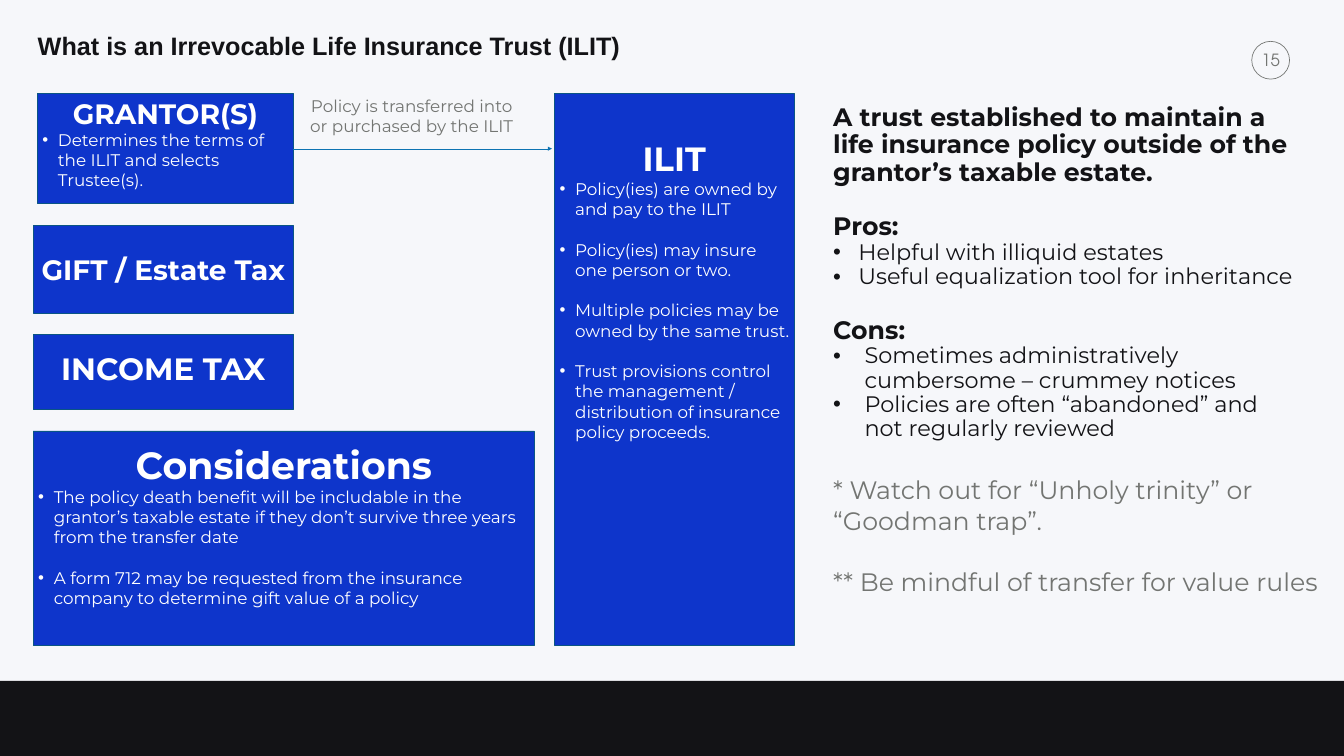
from dataclasses import dataclass

from lxml.etree import SubElement
from pptx import Presentation
from pptx.dml.color import RGBColor
from pptx.enum.shapes import MSO_CONNECTOR, MSO_SHAPE
from pptx.enum.text import MSO_ANCHOR, PP_ALIGN
from pptx.oxml.ns import qn
from pptx.shapes.autoshape import Shape
from pptx.slide import Slide
from pptx.util import Emu, Pt

PX = 9144  # EMU in one px, 100 px to the inch

BACKGROUND = RGBColor(0xF6, 0xF7, 0xFA)
INK = RGBColor(0x13, 0x13, 0x16)
GREY = RGBColor(0x73, 0x75, 0x72)
WHITE = RGBColor(0xFF, 0xFF, 0xFF)
CARD_BLUE = RGBColor(0x0E, 0x35, 0xCB)
CARD_EDGE = RGBColor(0x0A, 0x55, 0x84)
ARROW_BLUE = RGBColor(0x0D, 0x73, 0xB2)

BODY_FONT = "Montserrat"
LINE_HEIGHT = 1.22  # of the body font, in ems


def px(length: int) -> Emu:
    return Emu(length * PX)


@dataclass(frozen=True)
class Box:
    left: int
    top: int
    width: int
    height: int

    def emu(self) -> tuple[Emu, Emu, Emu, Emu]:
        return px(self.left), px(self.top), px(self.width), px(self.height)


@dataclass(frozen=True)
class Para:
    text: str
    size: int
    bold: bool = False
    bullet_indent: int = 0
    gap_before: float = 0


@dataclass(frozen=True)
class Card:
    """A blue box; its points start below the heading, text_top px down."""
    box: Box
    heading: str
    heading_size: int
    points: tuple[str, ...] = ()
    text_top: int = 5
    text_bottom: int = 5


GRANTORS = Card(Box(74, 186, 508, 218), "GRANTOR(S)", 40,
                ("Determines the terms of the ILIT and selects Trustee(s).",))
CARDS = (
    Card(Box(66, 447, 516, 174), "GIFT / Estate Tax", 40),
    Card(Box(66, 663, 516, 150), "INCOME TAX", 44, text_bottom=19),
    Card(Box(66, 855, 994, 426), "Considerations", 54, (
        "The policy death benefit will be includable in the grantor’s taxable "
        "estate if they don’t survive three years from the transfer date",
        "A form 712 may be requested from the insurance company to determine "
        "gift value of a policy",
    ), text_top=21),
    Card(Box(1100, 185, 475, 1096), "ILIT", 48, (
        "Policy(ies) are owned by and pay to the ILIT",
        "Policy(ies) may insure one person or two.",
        "Multiple policies may be owned by the same trust.",
        "Trust provisions control the management / distribution of insurance "
        "policy proceeds.",
    ), text_top=89),
)

SUMMARY_SPACING = 0.9
SUMMARY_GAP = round(36 * LINE_HEIGHT * SUMMARY_SPACING, 1)
SUMMARY = (
    Para("A trust established to maintain a life insurance policy outside of "
         "the grantor’s taxable estate.", 36, bold=True),
    Para("Pros:", 36, bold=True, gap_before=SUMMARY_GAP),
    Para("Helpful with illiquid estates", 32, bullet_indent=50),
    Para("Useful equalization tool for inheritance", 32, bullet_indent=50),
    Para("Cons:", 36, bold=True, gap_before=SUMMARY_GAP),
    Para("Sometimes administratively cumbersome – crummey notices", 32,
         bullet_indent=62),
    Para("Policies are often “abandoned” and not regularly reviewed", 32,
         bullet_indent=62),
)
WARNINGS = (
    Para("* Watch out for “Unholy trinity” or “Goodman trap”.", 36),
    Para("** Be mindful of transfer for value rules", 36,
         gap_before=round(36 * LINE_HEIGHT, 1)),
)


def write_text(shape: Shape, paras: tuple[Para, ...], *, color: RGBColor,
               font: str = BODY_FONT, align: PP_ALIGN = PP_ALIGN.LEFT,
               anchor: MSO_ANCHOR = MSO_ANCHOR.TOP, spacing: float = 1.0,
               top: int = 5, bottom: int = 5, side: int = 10) -> None:
    """Fill a shape with paragraphs; bulleted ones are always left-aligned."""
    frame = shape.text_frame
    frame.word_wrap = True
    frame.vertical_anchor = anchor
    frame.margin_top, frame.margin_bottom = px(top), px(bottom)
    frame.margin_left = frame.margin_right = px(side)
    for index, para in enumerate(paras):
        paragraph = frame.add_paragraph() if index else frame.paragraphs[0]
        paragraph.alignment = PP_ALIGN.LEFT if para.bullet_indent else align
        paragraph.line_spacing = spacing
        paragraph.space_before = Pt(para.gap_before)
        if para.bullet_indent:
            properties = paragraph._p.get_or_add_pPr()
            properties.set("marL", str(px(para.bullet_indent)))
            properties.set("indent", str(-px(para.bullet_indent)))
            SubElement(properties, qn("a:buFont"), typeface="Arial")
            SubElement(properties, qn("a:buChar"), char="•")
        run = paragraph.add_run()
        run.text = para.text
        run.font.name = font
        run.font.size = Pt(para.size)
        run.font.bold = para.bold
        run.font.color.rgb = color


def add_text(slide: Slide, box: Box, *paras: Para, **text_format) -> None:
    write_text(slide.shapes.add_textbox(*box.emu()), paras, **text_format)


def add_block(slide: Slide, kind: MSO_SHAPE, box: Box,
              fill: RGBColor | None, edge: RGBColor | None) -> Shape:
    block = slide.shapes.add_shape(kind, *box.emu())
    block.shadow.inherit = False
    if fill is None:
        block.fill.background()
    else:
        block.fill.solid()
        block.fill.fore_color.rgb = fill
    if edge is None:
        block.line.fill.background()
    else:
        block.line.color.rgb = edge
        block.line.width = Pt(1)
    return block


def add_card(slide: Slide, card: Card) -> Shape:
    block = add_block(slide, MSO_SHAPE.RECTANGLE, card.box, CARD_BLUE, CARD_EDGE)
    heading = Para(card.heading, card.heading_size, bold=True)
    points = (Para(point, 24, bullet_indent=31,
                   gap_before=round(24 * LINE_HEIGHT, 1) if index else 0)
              for index, point in enumerate(card.points))
    write_text(block, (heading, *points), color=WHITE, align=PP_ALIGN.CENTER,
               anchor=MSO_ANCHOR.TOP if card.points else MSO_ANCHOR.MIDDLE,
               top=card.text_top, bottom=card.text_bottom)
    return block


def add_transfer_arrow(slide: Slide, source: Shape, end_x: int) -> None:
    """Draw a level arrow from the right side of the source."""
    y = source.top + source.height // 2
    arrow = slide.shapes.add_connector(
        MSO_CONNECTOR.STRAIGHT, source.left + source.width, y, px(end_x), y)
    arrow.begin_connect(source, 3)
    arrow.line.color.rgb = ARROW_BLUE
    arrow.line.width = Pt(0.5)
    SubElement(arrow.line._get_or_add_ln(), qn("a:tailEnd"), type="triangle")
    SubElement(arrow._element.spPr, qn("a:effectLst"))


def main() -> None:
    deck = Presentation()
    deck.slide_width, deck.slide_height = px(2666), px(1500)
    slide = deck.slides.add_slide(deck.slide_layouts[6])
    slide.background.fill.solid()
    slide.background.fill.fore_color.rgb = BACKGROUND

    add_block(slide, MSO_SHAPE.RECTANGLE, Box(0, 1351, 2666, 149), INK, None)
    page_badge = add_block(slide, MSO_SHAPE.OVAL, Box(2483, 82, 75, 75), None, GREY)
    write_text(page_badge, (Para("15", 24),), color=GREY,
               font="TeX Gyre Adventor", align=PP_ALIGN.CENTER,
               anchor=MSO_ANCHOR.MIDDLE, top=0, bottom=0, side=0)
    add_text(slide, Box(65, 63, 2575, 70),
             Para("What is an Irrevocable Life Insurance Trust (ILIT)", 36, bold=True),
             color=INK, font="Arial", spacing=0.9)

    grantors = add_card(slide, GRANTORS)
    for card in CARDS:
        add_card(slide, card)
    add_text(slide, Box(601, 185, 431, 91),
             Para("Policy is transferred into or purchased by the ILIT", 24),
             color=GREY, align=PP_ALIGN.CENTER)
    add_transfer_arrow(slide, grantors, end_x=1095)

    add_text(slide, Box(1643, 203, 949, 731), *SUMMARY, color=INK,
             spacing=SUMMARY_SPACING)
    add_text(slide, Box(1643, 937, 1016, 300), *WARNINGS, color=GREY)

    deck.save("out.pptx")


if __name__ == "__main__":
    main()
